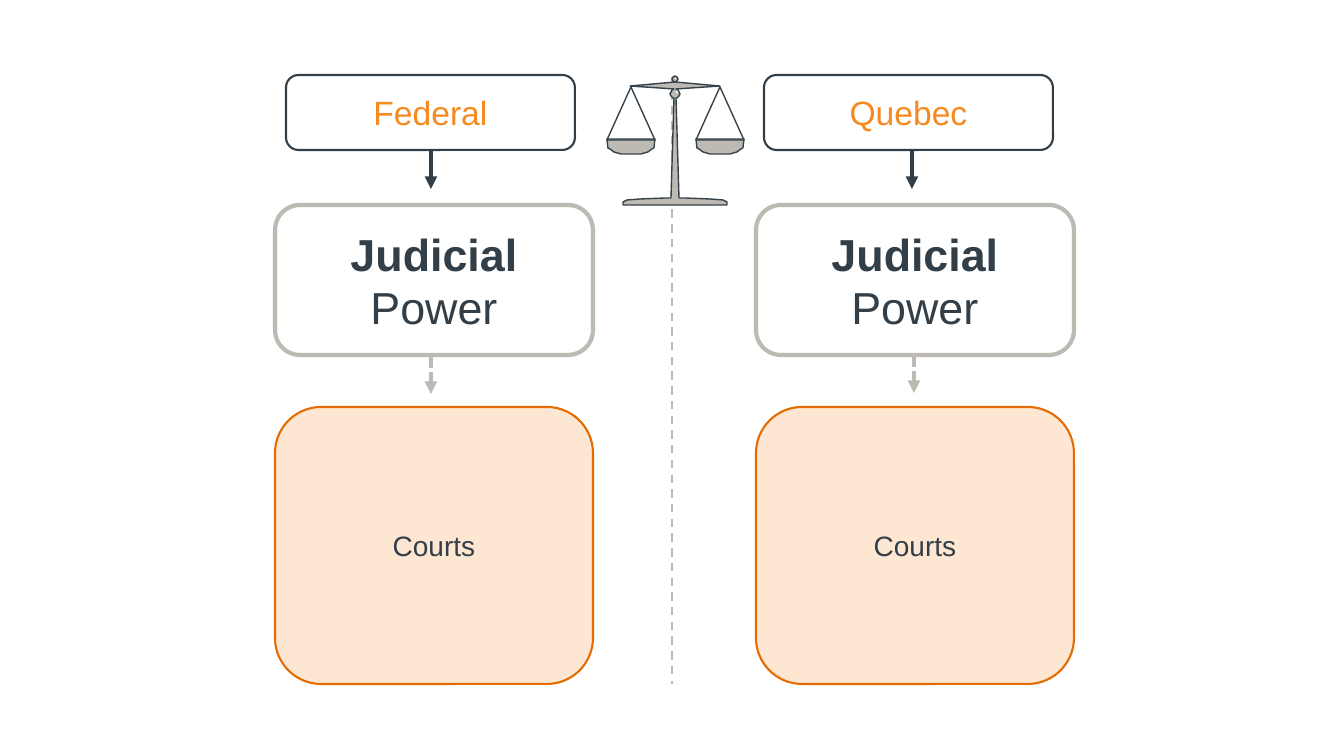
"""Build a slide comparing federal and Quebec judicial power around a balance."""
from lxml import etree
from pptx import Presentation
from pptx.dml.color import RGBColor
from pptx.enum.dml import MSO_LINE
from pptx.enum.shapes import MSO_CONNECTOR, MSO_SHAPE
from pptx.enum.text import MSO_ANCHOR, PP_ALIGN
from pptx.oxml.ns import qn
from pptx.util import Pt

STRAIGHT = MSO_CONNECTOR.STRAIGHT
ROUNDED = MSO_SHAPE.ROUNDED_RECTANGLE
TRIANGLE = MSO_SHAPE.FLOWCHART_EXTRACT
OVAL = MSO_SHAPE.OVAL
DASH, SHORT_DASH = MSO_LINE.DASH, MSO_LINE.SQUARE_DOT
MIDDLE, CENTER = MSO_ANCHOR.MIDDLE, PP_ALIGN.CENTER
EMU_PER_PX = 914400 / 100.8
THEME = {
    "font": "Arial",
    "white": RGBColor.from_string("FFFFFF"),
    "slate": RGBColor.from_string("333F48"),
    "outline": RGBColor.from_string("36424B"),
    "gray": RGBColor.from_string("BCBAB3"),
    "orange": RGBColor.from_string("F6891F"),
    "rust": RGBColor.from_string("E46C00"),
    "peach": RGBColor.from_string("FDE7D2"),
    "level": 24,
    "power": 32,
    "courts": 20,
}


def to_emu(*lengths):
    return [round(length * EMU_PER_PX) for length in lengths]


def paint(shape, fill, line, width):
    shape.shadow.inherit = False
    if fill:
        shape.fill.solid()
        shape.fill.fore_color.rgb = THEME[fill]
    else:
        shape.fill.background()
    if line:
        shape.line.color.rgb = THEME[line]
        shape.line.width = Pt(width)
    else:
        shape.line.fill.background()


presentation = Presentation()
presentation.slide_width, presentation.slide_height = to_emu(1344, 756)
slide = presentation.slides.add_slide(presentation.slide_layouts[6])
shapes = slide.shapes

lines = [
    (672, 77, 684, "gray", 1.5, DASH, False),
    (431, 355, 394, "gray", 3, SHORT_DASH, True),
    (914, 354, 393, "gray", 3, SHORT_DASH, True),
    (431, 149, 189, "slate", 3, None, True),
    (912, 149, 189, "slate", 3, None, True),
]
for x, top, bottom, color, width, dash, has_head in lines:
    connector = shapes.add_connector(STRAIGHT, *to_emu(x, top, x, bottom))
    connector.line.color.rgb = THEME[color]
    connector.line.width = Pt(width)
    if dash:
        connector.line.dash_style = dash
    if has_head:
        etree.SubElement(connector.line._get_or_add_ln(), qn("a:tailEnd"), type="triangle")
    etree.SubElement(connector._element.spPr, qn("a:effectLst"))

columns = [("Federal", 286, 275), ("Quebec", 764, 756)]
for level, level_left, left in columns:
    boxes = [
        (level_left, 75, 289, 75, "white", "slate", 1.5, "level", "orange", [(level, False)]),
        (left, 205, 318, 150, "white", "gray", 3, "power", "slate",
         [("Judicial ", True), ("Power", False)]),
        (left, 407, 318, 277, "peach", "rust", 1.5, "courts", "slate", [("Courts", False)]),
    ]
    for x, y, width, height, fill, line, weight, size, color, runs in boxes:
        box = shapes.add_shape(ROUNDED, *to_emu(x, y, width, height))
        paint(box, fill, line, weight)
        box.text_frame.word_wrap = True
        box.text_frame.vertical_anchor = MIDDLE
        paragraph = box.text_frame.paragraphs[0]
        paragraph.alignment = CENTER
        for text, bold in runs:
            run = paragraph.add_run()
            run.text = text
            run.font.name = THEME["font"]
            run.font.size = Pt(THEME[size])
            run.font.bold = bold
            run.font.color.rgb = THEME[color]

stand = [(0, 82), (45, 86), (1, 89), (3, 90), (4, 92), (5, 94), (4, 96), (2, 98),
         (1, 98), (4, 198), (10, 198), (35, 199), (48, 200), (52, 202), (52, 205)]
knob = [(0, 76), (2, 77), (3, 79), (2, 81), (0, 82)]
pan = [(24, 139), (23, 148), (21, 149), (17, 152), (10, 154), (0, 154)]
pan_axes = [631, 720]
silhouettes = [(675, [stand, knob])] + [(axis, [pan]) for axis in pan_axes]
for axis, half_outlines in silhouettes:
    builder = None
    for half in half_outlines:
        points = [(axis + offset, y) for offset, y in half]
        points += [(axis - offset, y) for offset, y in reversed(half)]
        if builder is None:
            builder = shapes.build_freeform(*points[0], scale=EMU_PER_PX)
        else:
            builder.move_to(*points[0])
        builder.add_line_segments(points[1:], close=True)
    paint(builder.convert_to_shape(), "gray", "outline", 1)

for axis in pan_axes:
    chains = shapes.add_shape(TRIANGLE, *to_emu(axis - 24, 87, 48, 53))
    paint(chains, None, "outline", 1)

for x, y, diameter in [(676, 91, 2), (675, 78, 1)]:
    highlight = shapes.add_shape(OVAL, *to_emu(x, y, diameter, diameter))
    paint(highlight, "white", None, 0)

presentation.save("out.pptx")
